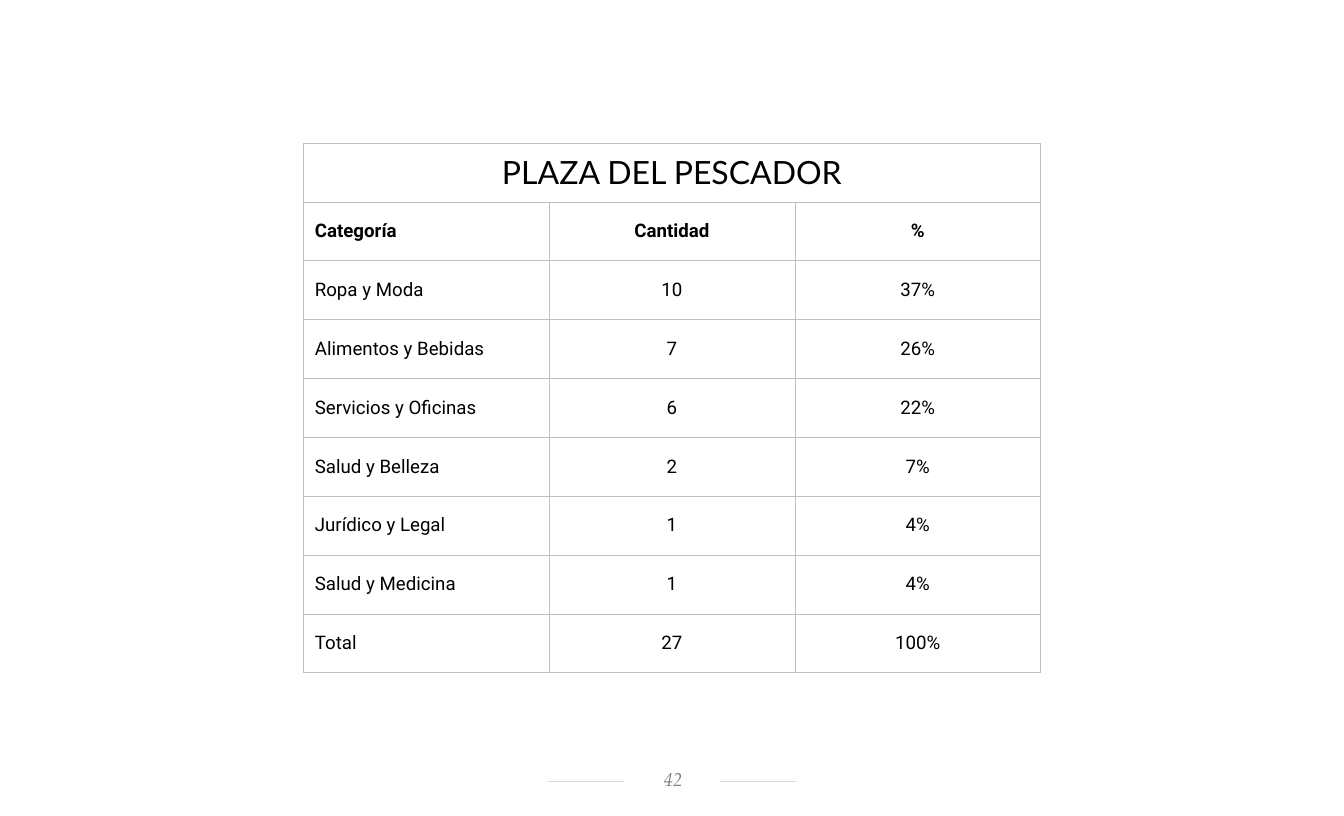
from dataclasses import dataclass

from lxml import etree
from pptx import Presentation
from pptx.dml.color import RGBColor
from pptx.enum.shapes import MSO_CONNECTOR, MSO_SHAPE
from pptx.enum.text import MSO_ANCHOR, PP_ALIGN
from pptx.oxml.ns import qn
from pptx.util import Inches, Pt

LEFT, CENTER = PP_ALIGN.LEFT, PP_ALIGN.CENTER
MIDDLE = MSO_ANCHOR.MIDDLE
RECT, STRAIGHT = MSO_SHAPE.RECTANGLE, MSO_CONNECTOR.STRAIGHT

WIDTH, HEIGHT = 14, 8.5


@dataclass(frozen=True)
class Theme:
    ink: str = "000000"
    paper: str = "FFFFFF"
    grid: str = "BFBFBF"
    rule: str = "D9D9D9"
    muted: str = "808080"
    title: tuple = ("Lato", 24)
    body: tuple = ("Roboto", 14)
    page: tuple = ("TeX Gyre Pagella", 14)
    stroke: float = 0.5


THEME = Theme()

TITLE = "PLAZA DEL PESCADOR"
ROWS = [
    ("Categoría", "Cantidad", "%"),
    ("Ropa y Moda", "10", "37%"),
    ("Alimentos y Bebidas", "7", "26%"),
    ("Servicios y Oficinas", "6", "22%"),
    ("Salud y Belleza", "2", "7%"),
    ("Jurídico y Legal", "1", "4%"),
    ("Salud y Medicina", "1", "4%"),
    ("Total", "27", "100%"),
]


def color(code):
    return RGBColor.from_string(code)


def write(frame, text, face, ink, align=CENTER, bold=False, slant=False):
    para = frame.paragraphs[0]
    para.alignment = align
    run = para.add_run()
    run.text = text
    font = run.font
    font.name, font.size = face[0], Pt(face[1])
    font.bold, font.italic = bold, slant
    font.color.rgb = color(ink)


def pad(box, left, top, right, bottom):
    box.margin_left, box.margin_top = Inches(left), Inches(top)
    box.margin_right, box.margin_bottom = Inches(right), Inches(bottom)
    box.vertical_anchor = MIDDLE


def edge(cell):
    """Draw all four borders; they must come before the cell's fill."""
    props = cell._tc.get_or_add_tcPr()
    for spot, side in enumerate(("a:lnL", "a:lnR", "a:lnT", "a:lnB")):
        line = etree.Element(qn(side), w=str(Pt(THEME.stroke)))
        fill = etree.SubElement(line, qn("a:solidFill"))
        etree.SubElement(fill, qn("a:srgbClr"), val=THEME.grid)
        props.insert(spot, line)


def add_grid(slide):
    count, cols = len(ROWS) + 1, len(ROWS[0])
    wide, tall = 7.68, 5.52
    table = slide.shapes.add_table(
        count, cols, Inches((WIDTH - wide) / 2), Inches(1.49),
        Inches(wide), Inches(tall)).table
    table.first_row = table.horz_banding = False
    for row in table.rows:
        row.height = Inches(tall / count)

    # Base look of every cell
    for cell in table.iter_cells():
        cell.fill.background()
        pad(cell, 0.01, 0.01, 0.01, 0.01)
        edge(cell)

    # Title across all columns
    head = table.cell(0, 0)
    head.merge(table.cell(0, cols - 1))
    write(head.text_frame, TITLE, THEME.title, THEME.ink)

    # Column heads and data
    for r, row in enumerate(ROWS, 1):
        for c, text in enumerate(row):
            cell = table.cell(r, c)
            if c == 0:
                cell.margin_left = Inches(0.12)
                cell.fill.solid()
                cell.fill.fore_color.rgb = color(THEME.paper)
            write(cell.text_frame, text, THEME.body, THEME.ink,
                  CENTER if c else LEFT, bold=r == 1)


def add_rule(slide, wide, y):
    start = (WIDTH - wide) / 2
    line = slide.shapes.add_connector(
        STRAIGHT, Inches(start), Inches(y), Inches(start + wide), Inches(y))
    line.line.color.rgb = color(THEME.rule)
    line.line.width = Pt(THEME.stroke)
    etree.SubElement(line._element.spPr, qn("a:effectLst"))


def add_page(slide, text):
    wide = 0.99
    box = slide.shapes.add_shape(
        RECT, Inches((WIDTH - wide) / 2), Inches(7.98),
        Inches(wide), Inches(0.29))
    box.shadow.inherit = False
    box.fill.solid()
    box.fill.fore_color.rgb = color(THEME.paper)
    box.line.fill.background()
    pad(box.text_frame, 0.12, 0.02, 0.1, 0.05)
    write(box.text_frame, text, THEME.page, THEME.muted, slant=True)


def main():
    deck = Presentation()
    deck.slide_width, deck.slide_height = Inches(WIDTH), Inches(HEIGHT)
    slide = deck.slides.add_slide(deck.slide_layouts[6])

    # Footer: the page number interrupts the rule
    add_rule(slide, 2.58, 8.14)
    add_page(slide, "42")

    # Table of categories
    add_grid(slide)
    deck.save("out.pptx")


if __name__ == "__main__":
    main()
